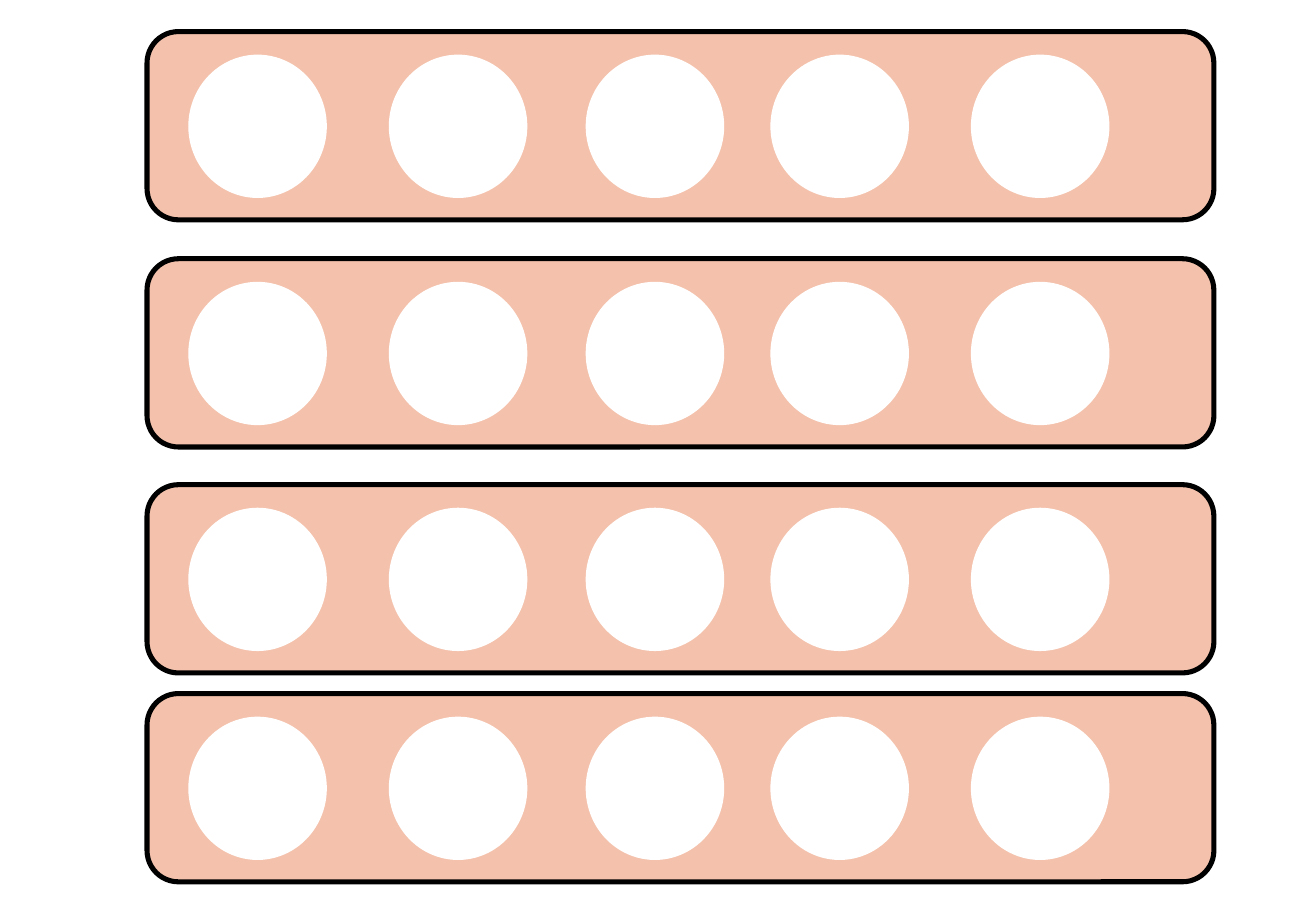
from pptx import Presentation
from pptx.dml.color import RGBColor
from pptx.enum.shapes import MSO_SHAPE
from pptx.util import Emu, Pt

EMU_PER_PX = 9144  # 100 px to the inch

SLIDE_WIDTH, SLIDE_HEIGHT = 1083, 750
STRIP_LEFT, STRIP_WIDTH, STRIP_HEIGHT = 121, 878, 155
STRIP_TOPS = (26, 213, 399, 571)

# Circle positions, measured from the corner of a strip
CIRCLE_LEFTS = (34, 199, 361, 513, 678)
CIRCLE_TOP, CIRCLE_WIDTH, CIRCLE_HEIGHT = 19, 114, 118

PEACH, WHITE, BLACK = "F4C2AC", "FFFFFF", "000000"


def px(length):
    return Emu(length * EMU_PER_PX)


def color(hex_string):
    return RGBColor.from_string(hex_string)


def add_filled_shape(slide, kind, left, top, width, height, fill, outline=None):
    shape = slide.shapes.add_shape(kind, px(left), px(top), px(width), px(height))
    shape.shadow.inherit = False
    shape.fill.solid()
    shape.fill.fore_color.rgb = color(fill)
    if outline:
        shape.line.color.rgb = color(outline)
        shape.line.width = Pt(3)
    else:
        shape.line.fill.background()
    return shape


def add_strip(slide, left, top, width, height):
    # Rounded frame
    add_filled_shape(slide, MSO_SHAPE.ROUNDED_RECTANGLE,
                     left, top, width, height, PEACH, BLACK)
    # Row of circles
    for circle_left in CIRCLE_LEFTS:
        add_filled_shape(slide, MSO_SHAPE.OVAL, left + circle_left, top + CIRCLE_TOP,
                         CIRCLE_WIDTH, CIRCLE_HEIGHT, WHITE)


def main():
    presentation = Presentation()
    presentation.slide_width = px(SLIDE_WIDTH)
    presentation.slide_height = px(SLIDE_HEIGHT)
    slide = presentation.slides.add_slide(presentation.slide_layouts[6])

    # Four strips down the page
    for strip_top in STRIP_TOPS:
        add_strip(slide, STRIP_LEFT, strip_top, STRIP_WIDTH, STRIP_HEIGHT)

    presentation.save("out.pptx")


if __name__ == "__main__":
    main()
